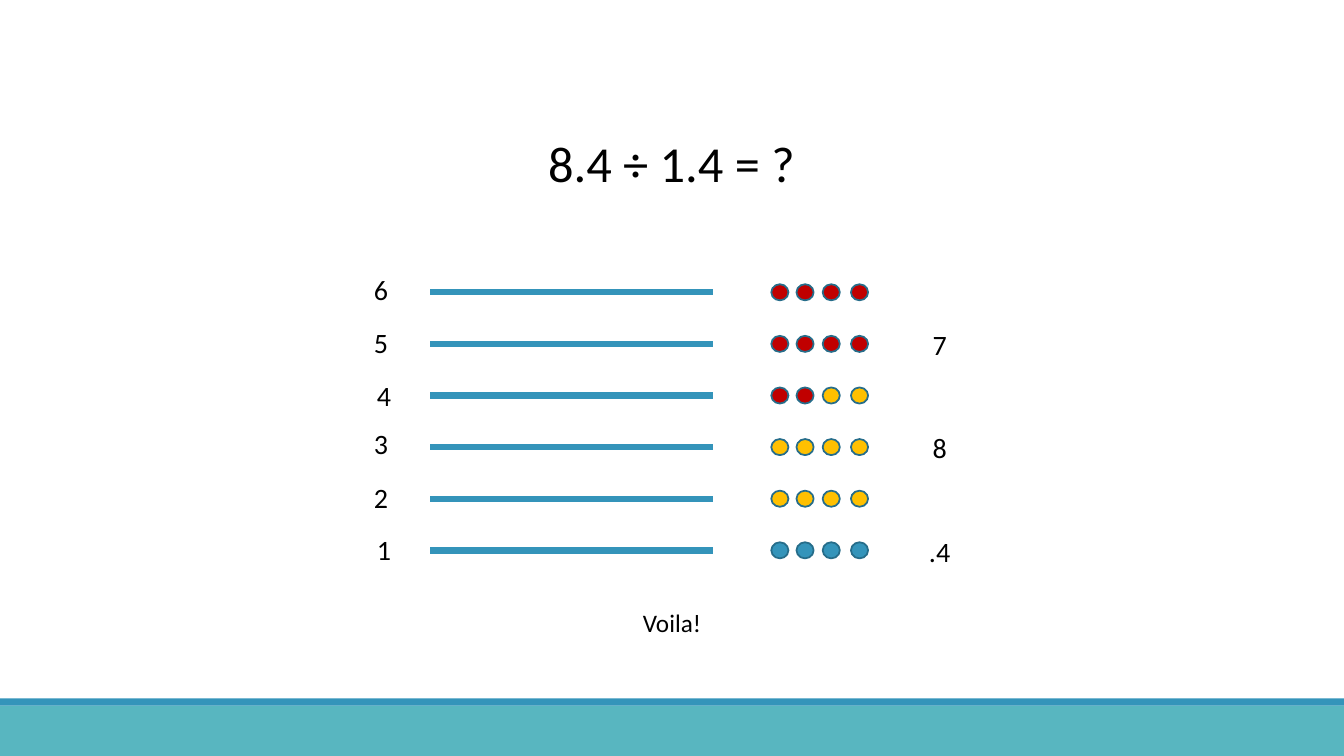
from dataclasses import dataclass

from lxml import etree
from pptx import Presentation
from pptx.dml.color import RGBColor
from pptx.enum.shapes import MSO_CONNECTOR, MSO_SHAPE
from pptx.enum.text import MSO_ANCHOR, PP_ALIGN
from pptx.oxml.ns import qn
from pptx.util import Inches, Pt

RECT, OVAL = MSO_SHAPE.RECTANGLE, MSO_SHAPE.OVAL
STRAIGHT = MSO_CONNECTOR.STRAIGHT
MIDDLE, CENTER = MSO_ANCHOR.MIDDLE, PP_ALIGN.CENTER


@dataclass(frozen=True)
class Theme:
    font: str = "Calibri"
    text: str = "000000"
    blue: str = "3494BA"
    teal: str = "58B6C0"
    outline: str = "266D8A"
    red: str = "C00000"
    yellow: str = "FFC000"
    title_size: float = 36
    label_size: float = 20
    caption_size: float = 18
    rod_width: float = 4.5
    outline_width: float = 1.25


T = Theme()

ROW_TOP, ROW_STEP = 2.9, 0.512
ROD_LEFT, ROD_RIGHT = 4.27, 7.07
DOT_LEFTS = (7.65, 7.9, 8.16, 8.44)
DOT_W, DOT_H = 0.17, 0.16
LABEL_W, LABEL_H = 0.76, 0.34
RESULT_LEFT = 8.94

ROWS = [
    ("6", 3.4, 2.7, [T.red] * 4),
    ("5", 3.4, 3.23, [T.red] * 4),
    ("4", 3.43, 3.75, [T.red] * 2 + [T.yellow] * 2),
    ("3", 3.4, 4.23, [T.yellow] * 4),
    ("2", 3.4, 4.76, [T.yellow] * 4),
    ("1", 3.43, 5.28, [T.blue] * 4),
]
RESULTS = [("7", 3.25), ("8", 4.27), (".4", 5.3)]


def rgb(value):
    return RGBColor.from_string(value)


def write(tf, text, size, color=T.text):
    tf.word_wrap = True
    p = tf.paragraphs[0]
    p.alignment = CENTER
    r = p.add_run()
    r.text = text
    r.font.name = T.font
    r.font.size = Pt(size)
    r.font.color.rgb = rgb(color)


def add_text(s, text, x, y, w, h, size):
    tf = s.shapes.add_textbox(Inches(x), Inches(y), Inches(w), Inches(h)).text_frame
    write(tf, text, size)


def add_shape(s, kind, x, y, w, h, fill=None, line=None):
    sp = s.shapes.add_shape(kind, Inches(x), Inches(y), Inches(w), Inches(h))
    sp.shadow.inherit = False
    if fill:
        sp.fill.solid()
        sp.fill.fore_color.rgb = rgb(fill)
    else:
        sp.fill.background()
    if line:
        sp.line.color.rgb = rgb(line)
        sp.line.width = Pt(T.outline_width)
    else:
        sp.line.fill.background()
    return sp


def add_label(s, text, x, y):
    sp = add_shape(s, OVAL, x, y, LABEL_W, LABEL_H)
    sp.text_frame.vertical_anchor = MIDDLE
    write(sp.text_frame, text, T.label_size)


def add_rod(s, y):
    rod = s.shapes.add_connector(
        STRAIGHT, Inches(ROD_LEFT), Inches(y), Inches(ROD_RIGHT), Inches(y))
    rod.line.color.rgb = rgb(T.blue)
    rod.line.width = Pt(T.rod_width)
    etree.SubElement(rod._element.spPr, qn("a:effectLst"))


def add_row(s, y, label, label_x, label_y, dots):
    add_rod(s, y)
    for x, color in zip(DOT_LEFTS, dots):
        add_shape(s, OVAL, x, y - DOT_H / 2, DOT_W, DOT_H, color, T.outline)
    add_label(s, label, label_x, label_y)


def main():
    prs = Presentation()
    prs.slide_width, prs.slide_height = Inches(13.33), Inches(7.5)
    s = prs.slides.add_slide(prs.slide_layouts[6])
    add_shape(s, RECT, 0, 7, 13.33, 0.5, T.teal)
    add_shape(s, RECT, 0, 6.93, 13.33, 0.07, T.blue)
    add_text(s, "8.4 ÷ 1.4 = ?", 4.52, 1.26, 4.28, 0.71, T.title_size)
    for i, row in enumerate(ROWS):
        add_row(s, ROW_TOP + i * ROW_STEP, *row)
    for text, y in RESULTS:
        add_label(s, text, RESULT_LEFT, y)
    add_text(s, "Voila!", 3.55, 5.98, 6.23, 0.4, T.caption_size)
    prs.save("out.pptx")


if __name__ == "__main__":
    main()
